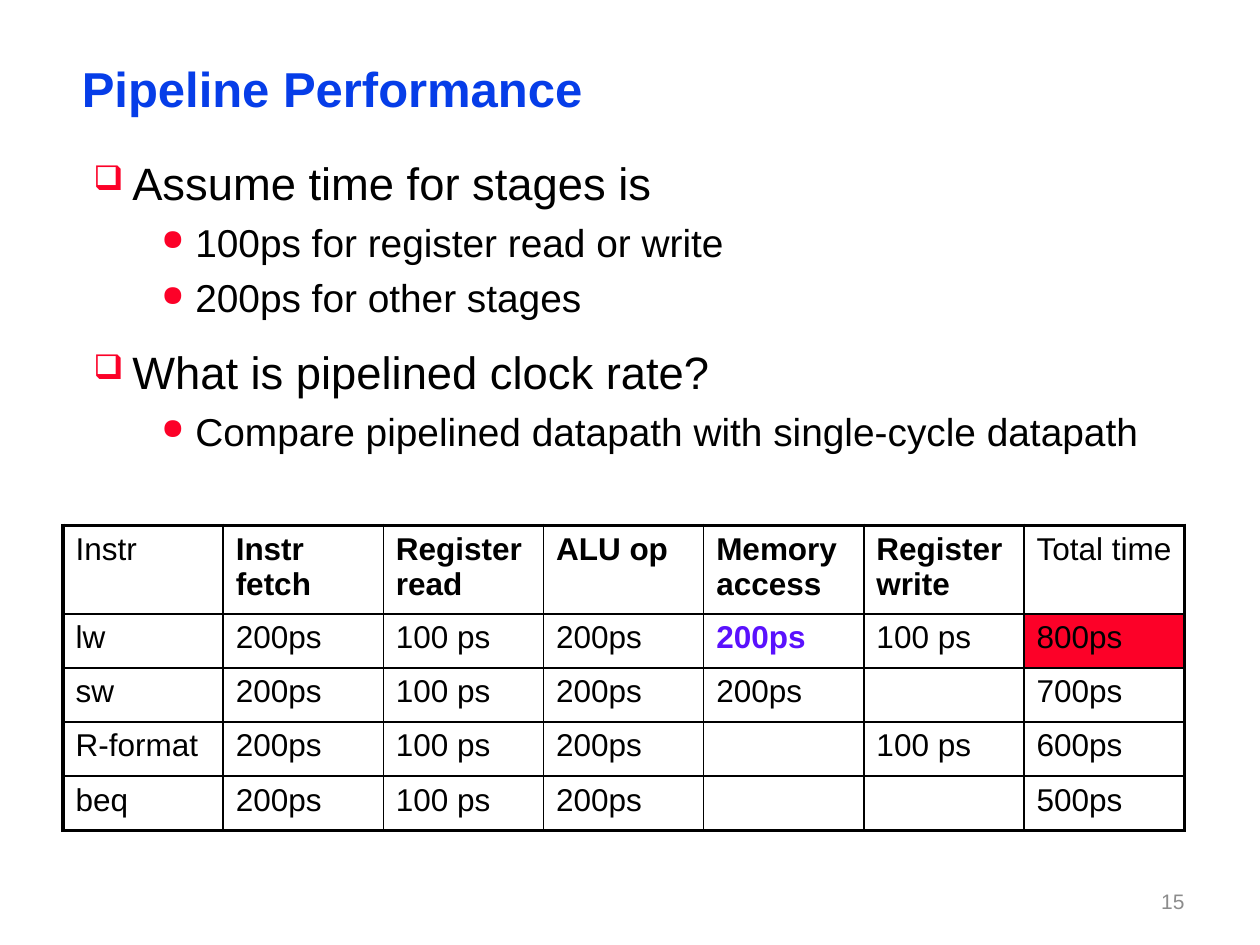
from dataclasses import dataclass

from lxml.etree import SubElement
from pptx import Presentation
from pptx.dml.color import RGBColor
from pptx.enum.text import MSO_ANCHOR, PP_ALIGN
from pptx.oxml.ns import qn
from pptx.util import Inches, Pt


@dataclass(frozen=True)
class Theme:
    font: str = "Arial"
    title: str = "063DE8"
    ink: str = "000000"
    accent: str = "FC0128"
    highlight: str = "5A11FD"
    muted: str = "8C8C8C"
    title_size: float = 28
    topic_size: float = 25.9
    detail_size: float = 22.2
    table_size: float = 18
    number_size: float = 12
    outer_line: float = 2.25
    header_line: float = 1.5
    inner_line: float = 1


@dataclass(frozen=True)
class Box:
    left: float
    top: float
    width: float
    height: float

    def lengths(self):
        return [Inches(v) for v in (self.left, self.top, self.width, self.height)]


THEME = Theme()
TITLE_BOX = Box(0.58, 0.5, 8.92, 0.46)
BODY_BOX = Box(0.67, 1.25, 9.05, 2.77)
TABLE_BOX = Box(0.5, 4.17, 8.9, 2.41)
NUMBER_BOX = Box(7.17, 6.95, 2.33, 0.4)
HEADER_HEIGHT = 0.69

# Each level: size, bullet, left margin, hanging indent, line spacing, space before in percent
LEVELS = (
    (THEME.topic_size, "❑", 0.31, 0.31, 0.9, 65),
    (THEME.detail_size, "●", 0.81, 0.27, 0.85, 40),
)
POINTS = (
    (0, "Assume time for stages is"),
    (1, "100ps for register read or write"),
    (1, "200ps for other stages"),
    (0, "What is pipelined clock rate?"),
    (1, "Compare pipelined datapath with single-cycle datapath"),
)
TIMINGS = (
    ("Instr", "Instr fetch", "Register read", "ALU op", "Memory access", "Register write", "Total time"),
    ("lw", "200ps", "100 ps", "200ps", "200ps", "100 ps", "800ps"),
    ("sw", "200ps", "100 ps", "200ps", "200ps", "", "700ps"),
    ("R-format", "200ps", "100 ps", "200ps", "", "100 ps", "600ps"),
    ("beq", "200ps", "100 ps", "200ps", "", "", "500ps"),
)
MEMORY_HIGHLIGHT = (1, 4)
SLOWEST_TOTAL = (1, 6)


def write(para, text, size, color=THEME.ink, bold=False, align=PP_ALIGN.LEFT, spacing=None, before=0):
    """Fill a paragraph with one span; before is a percentage of the line."""
    para.alignment = align
    if spacing:
        para.line_spacing = spacing
    if before:
        space = SubElement(para._p.get_or_add_pPr(), qn("a:spcBef"))
        SubElement(space, qn("a:spcPct"), val=str(before * 1000))
    span = para.add_run() if text else para
    if text:
        span.text = text
    span.font.name = THEME.font
    span.font.size = Pt(size)
    span.font.bold = bold
    span.font.color.rgb = RGBColor.from_string(color)


def add_bullet(para, char, margin, hanging):
    props = para._p.get_or_add_pPr()
    props.set("marL", str(Inches(margin)))
    props.set("indent", str(-Inches(hanging)))
    color = SubElement(props, qn("a:buClr"))
    SubElement(color, qn("a:srgbClr"), val=THEME.accent)
    SubElement(props, qn("a:buSzPct"), val="75000")
    SubElement(props, qn("a:buChar"), char=char)


def add_frame(page, box, inset=(0.07, 0.03), anchor=MSO_ANCHOR.TOP):
    frame = page.shapes.add_textbox(*box.lengths()).text_frame
    frame.word_wrap = True
    frame.vertical_anchor = anchor
    frame.margin_left = frame.margin_right = Inches(inset[0])
    frame.margin_top = frame.margin_bottom = Inches(inset[1])
    return frame


def add_title(page, box):
    para = add_frame(page, box).paragraphs[0]
    write(para, "Pipeline Performance", THEME.title_size, color=THEME.title, bold=True, spacing=0.87)


def add_points(page, box):
    frame = add_frame(page, box)
    for index, (level, text) in enumerate(POINTS):
        para = frame.add_paragraph() if index else frame.paragraphs[0]
        size, char, margin, hanging, spacing, before = LEVELS[level]
        para.level = level
        write(para, text, size, spacing=spacing, before=before)
        add_bullet(para, char, margin, hanging)


def set_borders(cell, **widths):
    """Draw the sides L, R, T and B, which must come before the cell's fill."""
    props = cell._tc.get_or_add_tcPr()
    for side, width in widths.items():
        line = SubElement(props, qn(f"a:ln{side}"), w=str(Pt(width)))
        fill = SubElement(line, qn("a:solidFill"))
        SubElement(fill, qn("a:srgbClr"), val=THEME.ink)


def add_timings(page, box):
    rows, columns = len(TIMINGS), len(TIMINGS[0])
    table = page.shapes.add_table(rows, columns, *box.lengths()).table
    table.first_row = table.horz_banding = False
    for column in table.columns:
        column.width = Inches(box.width / columns)
    for row in table.rows:
        row.height = Inches((box.height - HEADER_HEIGHT) / (rows - 1))
    table.rows[0].height = Inches(HEADER_HEIGHT)

    column_lines = [THEME.outer_line, *[THEME.inner_line] * (columns - 1), THEME.outer_line]
    row_lines = [THEME.outer_line, THEME.header_line, *[THEME.inner_line] * (rows - 2), THEME.outer_line]
    for r, texts in enumerate(TIMINGS):
        for c, text in enumerate(texts):
            cell = table.cell(r, c)
            set_borders(cell, L=column_lines[c], R=column_lines[c + 1], T=row_lines[r], B=row_lines[r + 1])
            if (r, c) == SLOWEST_TOTAL:
                cell.fill.solid()
                cell.fill.fore_color.rgb = RGBColor.from_string(THEME.accent)
            else:
                cell.fill.background()
            marked = (r, c) == MEMORY_HIGHLIGHT
            stage_name = r == 0 and 0 < c < columns - 1
            write(cell.text_frame.paragraphs[0], text, THEME.table_size, before=20,
                  color=THEME.highlight if marked else THEME.ink, bold=marked or stage_name)


def add_page_number(page, box):
    frame = add_frame(page, box, inset=(0.1, 0.05), anchor=MSO_ANCHOR.MIDDLE)
    write(frame.paragraphs[0], "15", THEME.number_size, color=THEME.muted, align=PP_ALIGN.RIGHT)


def main():
    deck = Presentation()
    deck.slide_width, deck.slide_height = Inches(10), Inches(7.5)
    page = deck.slides.add_slide(deck.slide_layouts[6])
    add_title(page, TITLE_BOX)
    add_points(page, BODY_BOX)
    add_timings(page, TABLE_BOX)
    add_page_number(page, NUMBER_BOX)
    deck.save("out.pptx")


if __name__ == "__main__":
    main()
